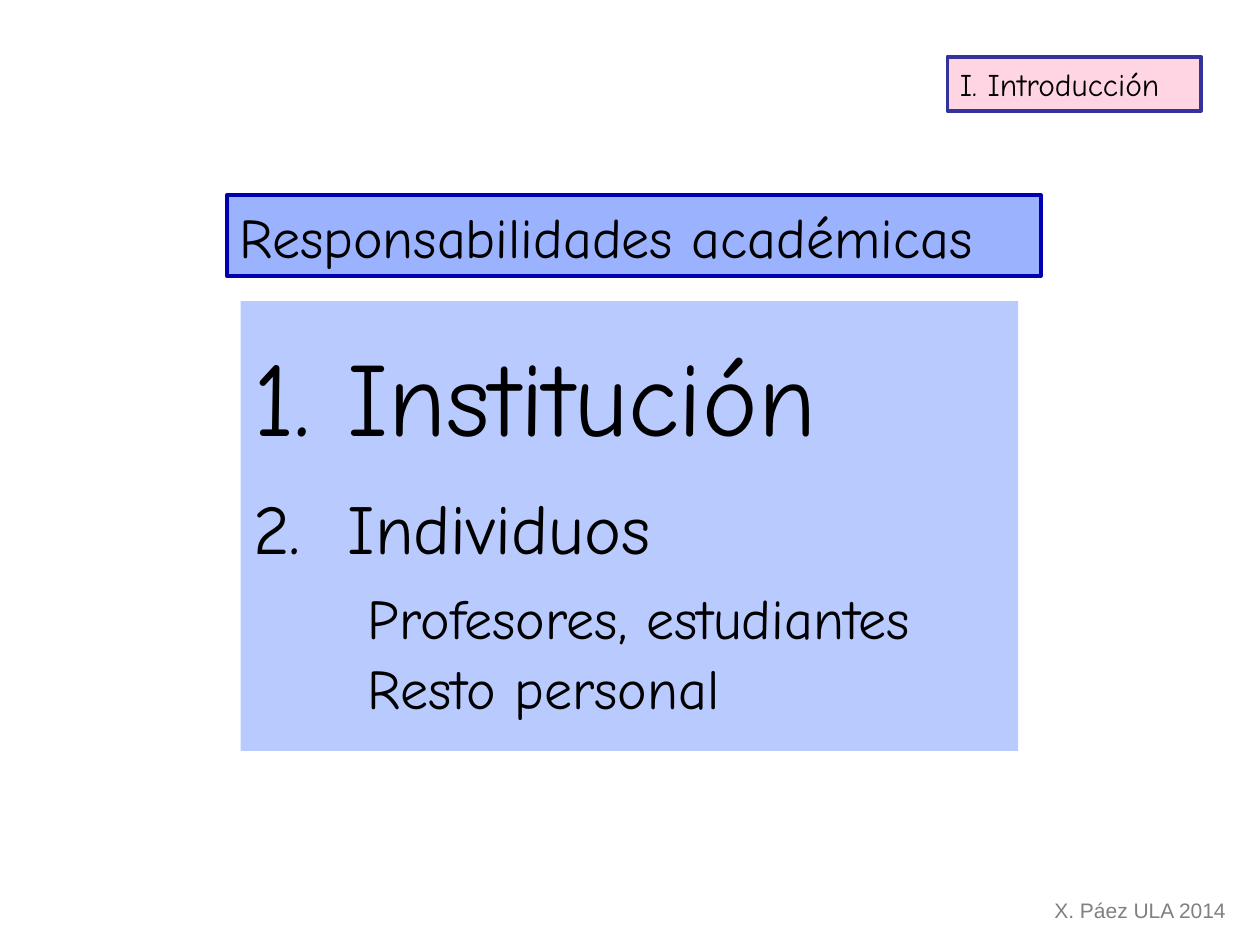
"""Build the slide on academic responsibilities."""
import pptx
import pptx.dml.color
import pptx.enum.shapes
import pptx.enum.text
import pptx.oxml.xmlchemy
import pptx.util
from lxml import etree
from pptx.util import Inches

COLORS = {
    "text": "000000", "footer": "808080",
    "title": "9BB3FF", "title_line": "0000B0",
    "body": "B9CAFF", "section": "FFD5E3", "section_line": "333399",
}
FONT = "Comic Neue"
TITLE = "Responsabilidades académicas"
SECTION = "I. Introducción"
FOOTER = "X. Páez ULA 2014"
ITEMS = [
    {"text": "Institución", "size": 60, "spacing": 86, "numbered": True},
    {"text": "Individuos", "size": 40, "spacing": 63, "numbered": True},
    {"text": "Profesores, estudiantes", "size": 32, "spacing": 47},
    {"text": "Resto personal", "size": 32, "spacing": 40},
]
NUMBER_INDENT = Inches(0.75)
DETAIL_INDENT = Inches(0.91)


def color(name):
    return pptx.dml.color.RGBColor.from_string(COLORS[name])


def place(box, left, top, width, height, fill=None, line=None, anchor="MIDDLE"):
    box.left, box.top = Inches(left), Inches(top)
    box.width, box.height = Inches(width), Inches(height)
    if fill:
        box.fill.solid()
        box.fill.fore_color.rgb = color(fill)
    if line:
        box.line.color.rgb = color(line)
        box.line.width = pptx.util.Pt(2.25)
    frame = box.text_frame
    frame.word_wrap = True
    frame.auto_size = pptx.enum.text.MSO_AUTO_SIZE.NONE
    frame.vertical_anchor = pptx.enum.text.MSO_ANCHOR[anchor]


def write(para, text, size, font=FONT, ink="text", spacing=None):
    span = para.add_run()
    span.text = text
    span.font.name = font
    span.font.size = pptx.util.Pt(size)
    span.font.color.rgb = color(ink)
    para.alignment = pptx.enum.text.PP_ALIGN.LEFT
    para.space_before = pptx.util.Pt(0)
    if spacing:
        para.line_spacing = pptx.util.Pt(spacing)


def set_list_style(para, numbered):
    properties = para._p.get_or_add_pPr()
    properties.set("marL", str(NUMBER_INDENT if numbered else DETAIL_INDENT))
    properties.set("indent", str(-NUMBER_INDENT if numbered else 0))
    tag = "a:buAutoNum" if numbered else "a:buNone"
    bullet = etree.SubElement(properties, pptx.oxml.ns.qn(tag))
    if numbered:
        bullet.set("type", "arabicPeriod")


def main():
    deck = pptx.Presentation()
    deck.slide_width, deck.slide_height = Inches(10), Inches(7.5)
    page = deck.slides.add_slide(deck.slide_layouts[1])

    body = page.placeholders[1]
    place(body, 1.91, 2.39, 6.17, 3.57, fill="body", anchor="TOP")
    for index, item in enumerate(ITEMS):
        frame = body.text_frame
        para = frame.add_paragraph() if index else frame.paragraphs[0]
        write(para, item["text"], item["size"], spacing=item["spacing"])
        set_list_style(para, item.get("numbered", False))

    title = page.shapes.title
    place(title, 1.8, 1.55, 6.46, 0.64, fill="title", line="title_line")
    write(title.text_frame.paragraphs[0], TITLE, 32)

    footer = page.shapes.add_textbox(0, 0, 0, 0)
    place(footer, 8.27, 7.07, 1.57, 0.3)
    footer.text_frame.word_wrap = False
    write(footer.text_frame.paragraphs[0], FOOTER, 12, font="Arial", ink="footer")

    rectangle = pptx.enum.shapes.MSO_SHAPE.RECTANGLE
    section = page.shapes.add_shape(rectangle, 0, 0, 0, 0)
    section.shadow.inherit = False
    place(section, 7.52, 0.45, 2.01, 0.43, fill="section", line="section_line")
    write(section.text_frame.paragraphs[0], SECTION, 18)

    deck.save("out.pptx")


if __name__ == "__main__":
    main()
